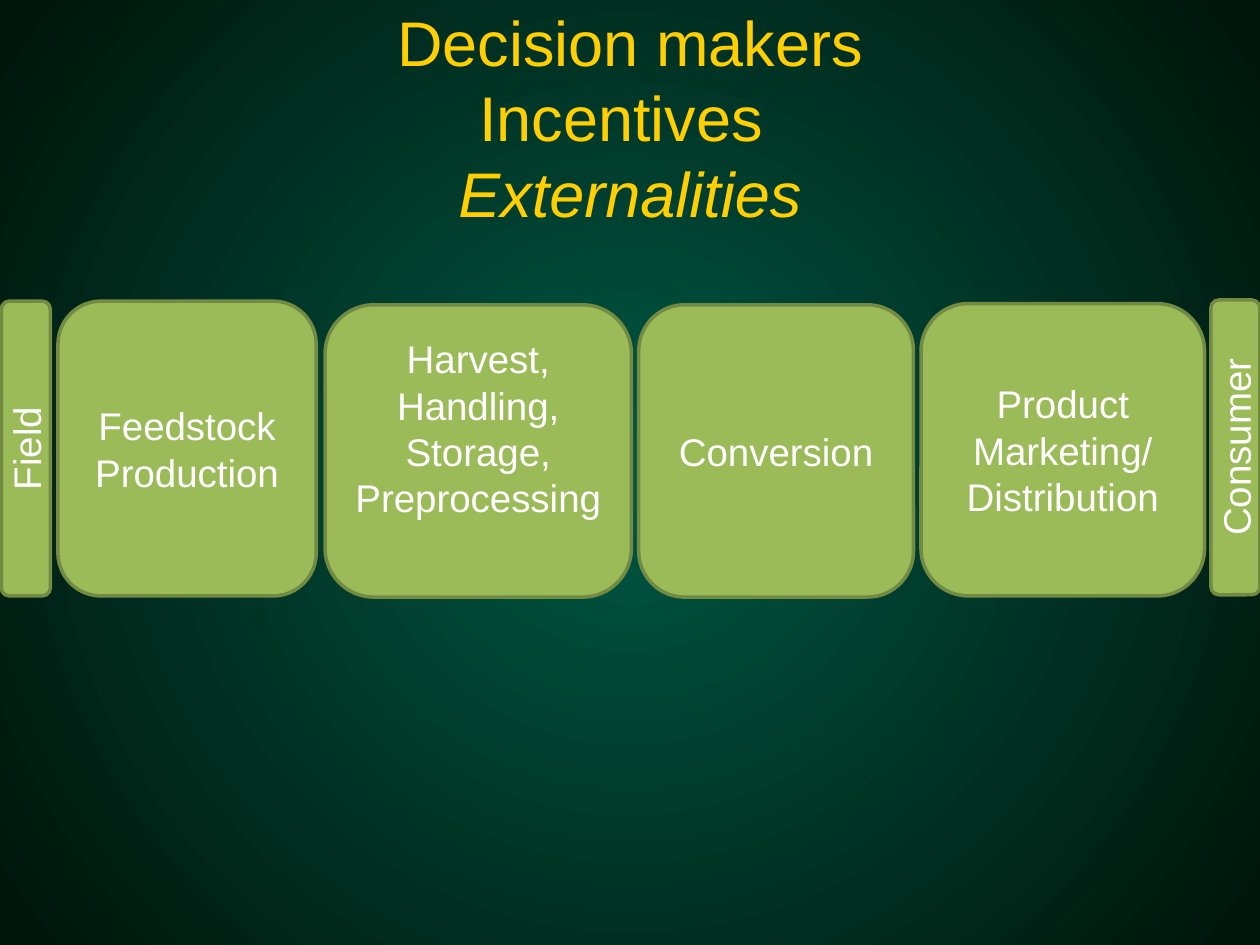
from dataclasses import dataclass

from lxml.etree import SubElement
from pptx import Presentation
from pptx.dml.color import RGBColor
from pptx.enum.shapes import MSO_SHAPE
from pptx.enum.text import MSO_ANCHOR, PP_ALIGN
from pptx.oxml.ns import qn
from pptx.util import Pt


@dataclass(frozen=True)
class Theme:
    font: str = "Arial"
    title_size: int = 36
    label_size: int = 22
    title: RGBColor = RGBColor(0xFF, 0xCF, 0x01)
    label: RGBColor = RGBColor(0xFF, 0xFF, 0xFF)
    stage: RGBColor = RGBColor(0x9B, 0xBB, 0x59)
    stage_edge: RGBColor = RGBColor(0x73, 0x8A, 0x42)
    glow: RGBColor = RGBColor(0x00, 0x56, 0x43)
    dark: RGBColor = RGBColor(0x00, 0x14, 0x09)


THEME = Theme()


def paint_background(page):
    """Fill the page with a circular gradient that is lightest in the centre."""
    fill = page.background.fill
    fill.gradient()
    stops = ((0.02, THEME.glow), (1, THEME.dark))
    for stop, (position, color) in zip(fill.gradient_stops, stops):
        stop.position = position
        stop.color.rgb = color
    gradient = page.element.find(".//" + qn("a:gradFill"))
    gradient.remove(gradient.find(qn("a:lin")))
    circle = SubElement(gradient, qn("a:path"), path="circle")
    SubElement(circle, qn("a:fillToRect"), l="50000", t="50000", r="50000", b="50000")


def add_span(para, text, *, size, color, italic=None):
    span = para.add_run()
    span.text = text
    span.font.name = THEME.font
    span.font.size = Pt(size)
    span.font.color.rgb = color
    span.font.italic = italic


def add_title(page, lines):
    """Add centred lines, the last one in italics."""
    box = page.shapes.add_textbox(Pt(36), Pt(21.6), Pt(648), Pt(90))
    frame = box.text_frame
    frame.word_wrap = True
    frame.vertical_anchor = MSO_ANCHOR.MIDDLE
    para = frame.paragraphs[0]
    para.alignment = PP_ALIGN.CENTER
    for index, line in enumerate(lines):
        if index:
            para.add_line_break()
        add_span(para, line, size=THEME.title_size, color=THEME.title,
                 italic=True if line == lines[-1] else None)


def add_stage(page, text, left, top, width, height, *, upright=False, bottom_inset=3.6):
    """Add a rounded box; upright text reads from bottom to top."""
    box = page.shapes.add_shape(MSO_SHAPE.ROUNDED_RECTANGLE,
                                Pt(left), Pt(top), Pt(width), Pt(height))
    box.shadow.inherit = False
    box.fill.solid()
    box.fill.fore_color.rgb = THEME.stage
    box.line.color.rgb = THEME.stage_edge
    box.line.width = Pt(2)
    frame = box.text_frame
    frame.word_wrap = True
    frame.vertical_anchor = MSO_ANCHOR.MIDDLE
    frame.margin_bottom = Pt(bottom_inset)
    if upright:
        frame._txBody.bodyPr.set("vert", "vert270")
    for index, line in enumerate(text.split("\n")):
        para = frame.add_paragraph() if index else frame.paragraphs[0]
        para.alignment = PP_ALIGN.CENTER
        add_span(para, line, size=THEME.label_size, color=THEME.label)


def main():
    deck = Presentation()
    deck.slide_width, deck.slide_height = Pt(720), Pt(540)
    page = deck.slides.add_slide(deck.slide_layouts[6])
    paint_background(page)
    add_title(page, ["Decision makers", "Incentives ", "Externalities"])

    add_stage(page, "Feedstock Production", 33.1, 172.1, 147.6, 168.5)
    add_stage(page, "Harvest, Handling, Storage, Preprocessing",
              185.8, 174.2, 175, 167, bottom_inset=30)
    add_stage(page, "Conversion", 365, 174.2, 157, 167)
    add_stage(page, "Product Marketing/\nDistribution", 526.3, 173.5, 162, 167)
    add_stage(page, "Consumer", 691.9, 171.4, 28.1, 168.5, upright=True)
    add_stage(page, "Field", 0.7, 172.1, 28.1, 168.5, upright=True)

    deck.save("out.pptx")


if __name__ == "__main__":
    main()
